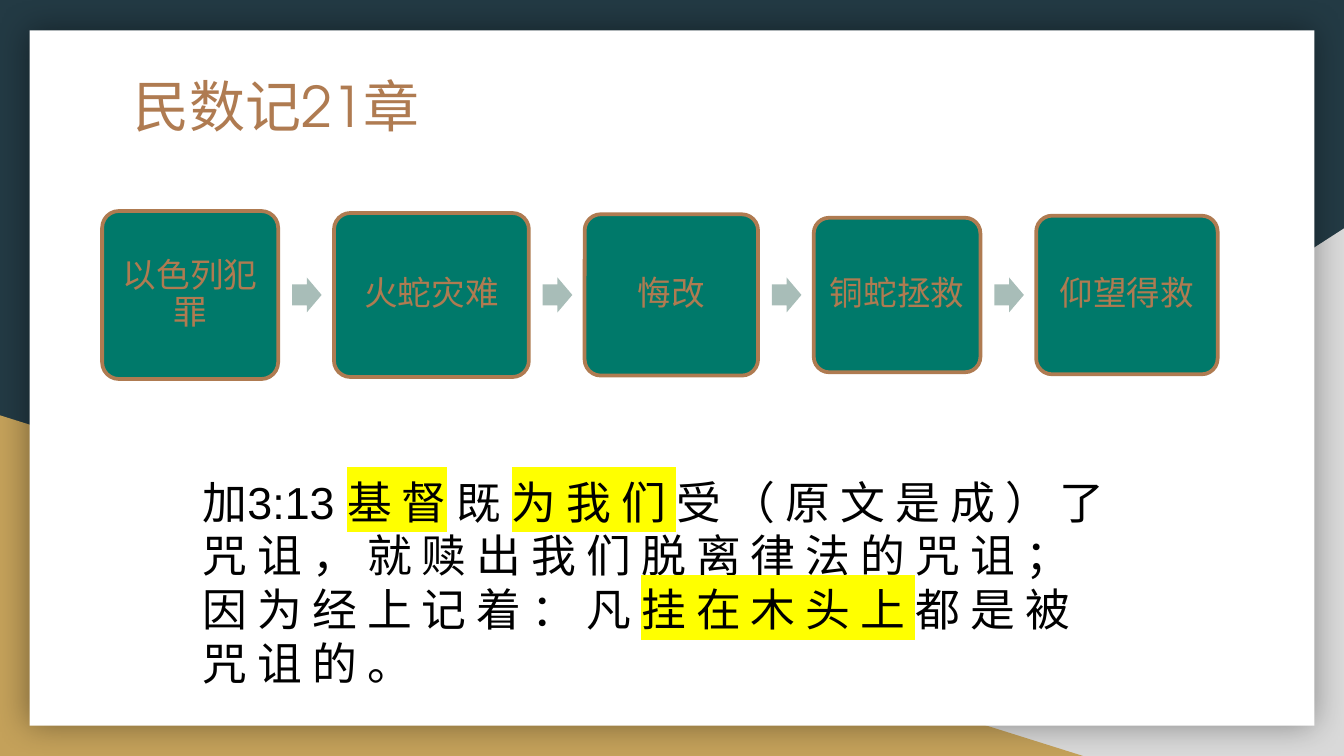
from dataclasses import dataclass

from lxml import etree
from pptx import Presentation
from pptx.dml.color import RGBColor
from pptx.enum.shapes import MSO_SHAPE
from pptx.enum.text import MSO_ANCHOR, MSO_AUTO_SIZE, PP_ALIGN
from pptx.oxml.ns import qn
from pptx.util import Inches, Pt

TRIANGLE = MSO_SHAPE.RIGHT_TRIANGLE
RECTANGLE = MSO_SHAPE.RECTANGLE
ROUNDED = MSO_SHAPE.ROUNDED_RECTANGLE
ARROW = MSO_SHAPE.RIGHT_ARROW
TOP, MIDDLE = MSO_ANCHOR.TOP, MSO_ANCHOR.MIDDLE
LEFT, CENTER = PP_ALIGN.LEFT, PP_ALIGN.CENTER
TITLE_ONLY = 5

# A 16:9 slide; the grid has 100 square columns across it
WIDTH = Inches(10)
HEIGHT = WIDTH * 9 // 16
CELL = WIDTH / 100


@dataclass(frozen=True)
class Theme:
    night: str = "233A44"
    grey: str = "D9D9D9"
    gold: str = "C4A15A"
    paper: str = "FFFFFF"
    copper: str = "AF7B51"
    green: str = "00796A"
    mist: str = "A8BDB8"
    ink: str = "000000"
    marker: str = "FFFF00"
    title_font: str = "TeX Gyre Adventor"
    body_font: str = "Arial"
    title_size: int = 30
    verse_size: int = 24
    step_size: int = 18


@dataclass(frozen=True)
class Area:
    """Place and size in grid columns and rows."""
    column: float
    row: float
    columns: float
    rows: float

    def lengths(self) -> list[int]:
        return [round(value * CELL)
                for value in (self.column, self.row, self.columns, self.rows)]


@dataclass(frozen=True)
class Step:
    label: str
    columns: float
    rows: float


@dataclass(frozen=True)
class Span:
    text: str
    marked: bool = False


THEME = Theme()
TITLE = "民数记21章"
TITLE_AREA = Area(8.95, 4.3, 82.1, 10.4)
PAPER_AREA = Area(2.2, 2.25, 95.6, 51.75)
GREY_AREA = Area(39.2, 17, 60.8, 39.25)
GOLD_AREA = Area(0, 30.9, 80.6, 25.35)
VERSE_AREA = Area(14.1, 34.8, 69.6, 17.2)

STEPS = [
    Step("以色列犯罪", 13.1, 12.5),
    Step("火蛇灾难", 14.5, 12.2),
    Step("悔改", 12.9, 12),
    Step("铜蛇拯救", 12.4, 11.5),
    Step("仰望得救", 13.5, 11.8),
]
FLOW_LEFT, FLOW_MIDDLE, FLOW_GAP = 7.6, 21.95, 4.15
ARROW_COLUMNS, ARROW_ROWS, ARROW_OFFSET = 2.2, 2.6, 1.03

VERSE = [
    Span("加3:13 "),
    Span("基 督", True),
    Span(" 既 "),
    Span("为 我 们 ", True),
    Span("受 （ 原 文 是 成 ） 了 咒 诅 ， 就 赎 出 我 们 脱 离 律 法 的 咒 诅 ； "
         "因 为 经 上 记 着 ： 凡 "),
    Span("挂 在 木 头 上 ", True),
    Span("都 是 被 咒 诅 的 。"),
]


def add_block(page, kind, area: Area, fill: str):
    block = page.shapes.add_shape(kind, *area.lengths())
    block.shadow.inherit = False
    block.fill.solid()
    block.fill.fore_color.rgb = RGBColor.from_string(fill)
    block.line.fill.background()
    return block


def set_frame(box, anchor, inset_x: float, inset_y: float):
    frame = box.text_frame
    frame.word_wrap = True
    frame.auto_size = MSO_AUTO_SIZE.NONE
    frame.vertical_anchor = anchor
    frame.margin_left = frame.margin_right = Inches(inset_x)
    frame.margin_top = frame.margin_bottom = Inches(inset_y)
    return frame


def add_span(para, span: Span, size: int, font: str, color: str) -> None:
    run = para.add_run()
    run.text = span.text
    run.font.size = Pt(size)
    run.font.color.rgb = RGBColor.from_string(color)
    if span.marked:
        highlight = etree.SubElement(run.font._element, qn("a:highlight"))
        etree.SubElement(highlight, qn("a:srgbClr"), val=THEME.marker)
    run.font.name = font


def add_glow(block) -> None:
    """Give a block a soft, centred shadow."""
    effects = block._element.spPr.find(qn("a:effectLst"))
    shadow = etree.SubElement(effects, qn("a:outerShdw"), blurRad=str(Pt(18)),
                              dist="0", dir="0", algn="ctr", rotWithShape="0")
    color = etree.SubElement(shadow, qn("a:srgbClr"), val=THEME.ink)
    etree.SubElement(color, qn("a:alpha"), val="40000")


def add_backdrop(page) -> None:
    page.background.fill.solid()
    page.background.fill.fore_color.rgb = RGBColor.from_string(THEME.night)
    corner = add_block(page, TRIANGLE, GREY_AREA, THEME.grey)
    corner._element.spPr.find(qn("a:xfrm")).set("flipH", "1")
    add_block(page, TRIANGLE, GOLD_AREA, THEME.gold)
    add_glow(add_block(page, RECTANGLE, PAPER_AREA, THEME.paper))


def add_title(page) -> None:
    title = page.shapes.title
    title.left, title.top, title.width, title.height = TITLE_AREA.lengths()
    para = set_frame(title, TOP, 0.1, 0.1).paragraphs[0]
    para.alignment = LEFT
    add_span(para, Span(TITLE), THEME.title_size, THEME.title_font, THEME.copper)
    # Bring the title in front of the backdrop
    page.shapes._spTree.append(title._element)


def add_step(page, step: Step, column: float) -> None:
    area = Area(column, FLOW_MIDDLE - step.rows / 2, step.columns, step.rows)
    box = add_block(page, ROUNDED, area, THEME.green)
    box.adjustments[0] = 0.1
    box.line.color.rgb = RGBColor.from_string(THEME.copper)
    box.line.width = Pt(2)
    para = set_frame(box, MIDDLE, 0.07, 0.07).paragraphs[0]
    para.alignment = CENTER
    para.line_spacing = 0.9
    add_span(para, Span(step.label), THEME.step_size, THEME.body_font, THEME.copper)


def add_flow(page, steps: list[Step]) -> None:
    column = FLOW_LEFT
    for index, step in enumerate(steps):
        # An arrow stands in the gap before every step but the first
        if index:
            area = Area(column - FLOW_GAP + ARROW_OFFSET,
                        FLOW_MIDDLE - ARROW_ROWS / 2, ARROW_COLUMNS, ARROW_ROWS)
            arrow = add_block(page, ARROW, area, THEME.mist)
            arrow.adjustments[0], arrow.adjustments[1] = 0.6, 0.5
        add_step(page, step, column)
        column += step.columns + FLOW_GAP


def add_verse(page, spans: list[Span]) -> None:
    box = page.shapes.add_textbox(*VERSE_AREA.lengths())
    frame = set_frame(box, TOP, 0.1, 0.05)
    frame.auto_size = MSO_AUTO_SIZE.SHAPE_TO_FIT_TEXT
    para = frame.paragraphs[0]
    # Keep punctuation inside the right margin
    para._p.get_or_add_pPr().set("hangingPunct", "0")
    for span in spans:
        add_span(para, span, THEME.verse_size, THEME.body_font, THEME.ink)


def main() -> None:
    deck = Presentation()
    deck.slide_width, deck.slide_height = WIDTH, HEIGHT
    page = deck.slides.add_slide(deck.slide_layouts[TITLE_ONLY])
    add_backdrop(page)
    add_title(page)
    add_flow(page, STEPS)
    add_verse(page, VERSE)
    deck.save("out.pptx")


if __name__ == "__main__":
    main()
